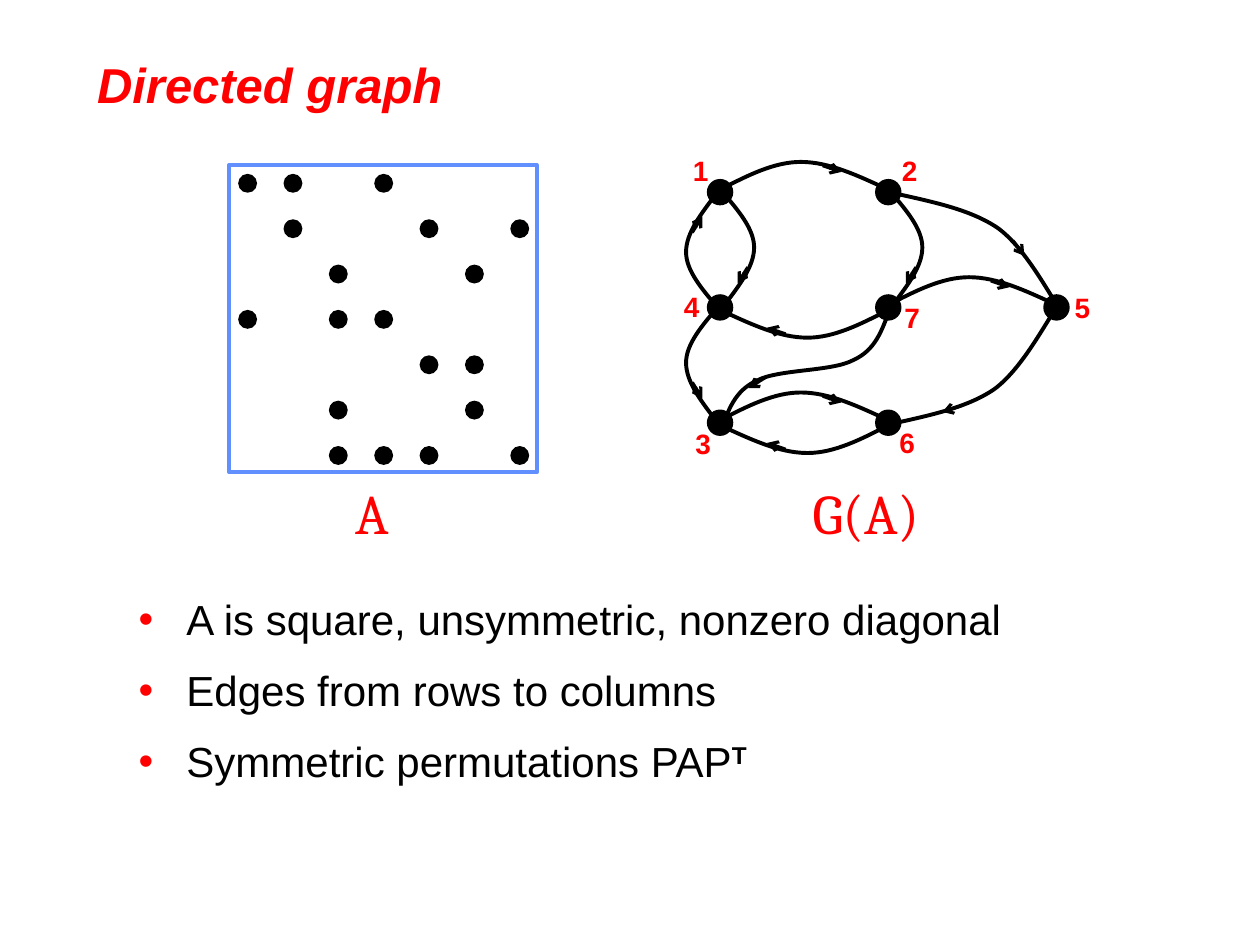
from pptx import Presentation
from pptx.dml.color import RGBColor as RGB
from pptx.enum.shapes import MSO_CONNECTOR as Conn, MSO_SHAPE as Form
from pptx.enum.text import MSO_ANCHOR as Anchor, MSO_AUTO_SIZE as Auto, PP_ALIGN as Align
from pptx.oxml.ns import qn
from pptx.util import Inches, Pt
from lxml.etree import SubElement as Sub

THEME = {
    "red": RGB(255, 0, 0), "black": RGB(0, 0, 0), "blue": RGB(0x61, 0x8F, 0xFD),
    "sans": "Arial", "serif": "Cambria",
    "title": 28, "body": 24, "name": 32, "node": 16,
    "curve": 2.25, "arrow": 1.75,
}
TITLE = "Directed graph"
BODY = [
    [("A is square, unsymmetric, nonzero diagonal", False)],
    [("Edges from rows to columns", False)],
    [("Symmetric permutations PAP", False), ("T", True)],
]
NAMES = [("A", 2.72, 0.52), ("G(A)", 6.35, 1.25)]

# node: (grid column, grid row, label left, label top)
NODES = {
    1: (0, 0, 5.4, 1.17), 2: (1, 0, 7.06, 1.17), 3: (0, 2, 5.42, 3.34),
    4: (0, 1, 5.33, 2.25), 5: (2, 1, 8.43, 2.26), 6: (1, 2, 7.04, 3.33),
    7: (1, 1, 7.08, 2.34),
}
# (row, column): curve style
EDGES = {
    (1, 2): "left", (1, 4): "left", (2, 5): "fall", (2, 7): "left",
    (3, 6): "left", (4, 1): "left", (4, 3): "right", (5, 6): "back",
    (6, 3): "left", (7, 3): "wave", (7, 4): "left", (7, 5): "left",
}
ARCH = [(0, 0), (0.16, 0.5), (0.32, 1), (0.48, 1), (0.65, 1), (0.82, 0.5), (1, 0)]
LONG = [(0, 0), (0.31, 0.07), (0.62, 0.13), (0.84, 0.28),
        (1.06, 0.44), (1.25, 0.81), (1.33, 0.92)]
HALF = [(0.67, -0.48), (0.61, -0.32), (0.56, -0.16), (0.38, -0.08), (0.21, 0.01)]


def spot(node):
    col, row, _, _ = NODES[node]
    return 5.715 + 1.335 * col, 1.525 + 0.915 * row


def arch(start, end, side):
    (x, y), (u, v) = spot(start), spot(end)
    flat = y == v
    size = abs(u - x) + abs(v - y)
    out = side * (v - y) / size, side * (x - u) / size

    def at(t, s):
        s += 0.02
        return x + t * (u - x) + s * out[0], y + t * (v - y) + s * out[1]

    high = 0.22 if flat else 0.25
    tips = [(0.61, 0.19), (0.72, 0.14)] if flat else [(0.65, 0.2), (0.79, 0.12)]
    return [at(t, high * s) for t, s in ARCH], [at(t, s) for t, s in tips]


def route(start, end, style):
    if style in ("left", "right"):
        return arch(start, end, 1 if style == "left" else -1)
    if style == "wave":
        both = HALF + [(-x, -y) for x, y in reversed(HALF)]
        return [(6.39 + x, 2.94 + y) for x, y in both], [(6.07, 3), (5.94, 3.08)]
    if style == "fall":
        return [(7.08 + x, 1.53 + y) for x, y in LONG], [(8.04, 1.91), (8.13, 2.03)]
    return ([(7.05 + x, 3.37 - y) for x, y in reversed(LONG)],
            [(7.63, 3.22), (7.48, 3.27)])


def place(shape, *box):
    shape.left, shape.top, shape.width, shape.height = map(Inches, box)


def write(para, text, size, color, face="sans", bold=False):
    run = para.add_run()
    run.text = text
    font = run.font
    font.name, font.size, font.bold = THEME[face], Pt(THEME[size]), bold
    font.color.rgb = THEME[color]
    return run


def label(shapes, text, box, size, **style):
    frame = shapes.add_textbox(*map(Inches, box)).text_frame
    frame.word_wrap = False
    frame.auto_size = Auto.SHAPE_TO_FIT_TEXT
    write(frame.paragraphs[0], text, size, "red", **style)


def dot(shapes, left, top, size):
    shape = shapes.add_shape(Form.OVAL, *map(Inches, (left, top, size, size)))
    shape.shadow.inherit = False
    shape.fill.solid()
    shape.fill.fore_color.rgb = THEME["black"]
    shape.line.fill.background()


def stroke(shape, color, size):
    shape.line.color.rgb = THEME[color]
    shape.line.width = Pt(THEME[size])


def curve(shapes, points):
    start, *rest = [(Inches(x), Inches(y)) for x, y in points]
    pen = shapes.build_freeform(*start)
    pen.add_line_segments(rest, close=False)
    shape = pen.convert_to_shape()
    shape.shadow.inherit = False
    shape.fill.background()
    stroke(shape, "black", "curve")
    trace = next(shape.element.iter(qn("a:path")))
    steps = trace.findall(qn("a:lnTo"))
    for i in range(0, len(steps), 3):
        bend = Sub(trace, qn("a:cubicBezTo"))
        for step in steps[i:i + 3]:
            bend.append(step[0])
            trace.remove(step)


def arrow(shapes, ends):
    (x, y), (u, v) = ends
    line = shapes.add_connector(Conn.STRAIGHT, *map(Inches, (x, y, u, v)))
    stroke(line, "black", "arrow")
    Sub(line.line._get_or_add_ln(), qn("a:tailEnd"), type="arrow")
    Sub(line.element.spPr, qn("a:effectLst"))


def bullet(para):
    para.line_spacing = 1.2
    para.space_before = Pt(6)
    prop = para._p.get_or_add_pPr()
    prop.set("marL", str(Inches(0.38)))
    prop.set("indent", str(-Inches(0.38)))
    tint = Sub(prop, qn("a:buClr"))
    Sub(tint, qn("a:srgbClr"), val=str(THEME["red"]))
    Sub(prop, qn("a:buFont"), typeface=THEME["sans"])
    Sub(prop, qn("a:buChar"), char="•")


def heads(slide):
    title, body = slide.shapes.title, slide.placeholders[1]
    place(title, 0.67, 0.33, 8.19, 0.67)
    place(body, 1, 4.58, 8, 2.08)
    for shape, anchor in ((title, Anchor.MIDDLE), (body, Anchor.TOP)):
        shape.text_frame.auto_size = Auto.NONE
        shape.text_frame.vertical_anchor = anchor
    para = title.text_frame.paragraphs[0]
    para.alignment = Align.LEFT
    write(para, TITLE, "title", "red", bold=True).font.italic = True
    frame = body.text_frame
    for i, parts in enumerate(BODY):
        para = frame.add_paragraph() if i else frame.paragraphs[0]
        bullet(para)
        for text, power in parts:
            run = write(para, text, "body", "black", bold=power)
            if power:
                run.font._element.set("baseline", "30000")


def matrix(shapes):
    box = shapes.add_shape(Form.RECTANGLE, *map(Inches, (1.82, 1.31, 2.44, 2.44)))
    box.shadow.inherit = False
    box.fill.background()
    stroke(box, "blue", "curve")
    for row, col in [*EDGES, *((n, n) for n in NODES)]:
        dot(shapes, 1.89 + 0.36 * (col - 1), 1.38 + 0.36 * (row - 1), 0.15)


def graph(shapes):
    for node in NODES:
        x, y = spot(node)
        dot(shapes, x - 0.105, y - 0.105, 0.21)
    for (start, end), style in EDGES.items():
        points, ends = route(start, end, style)
        arrow(shapes, ends)
        curve(shapes, points)
    for node, (_, _, left, top) in NODES.items():
        label(shapes, str(node), (left, top, 0.32, 0.37), "node", bold=True)


def main():
    deck = Presentation()
    deck.slide_width, deck.slide_height = Inches(10), Inches(7.5)
    slide = deck.slides.add_slide(deck.slide_layouts[1])
    heads(slide)
    for draw in (matrix, graph):
        draw(slide.shapes.add_group_shape().shapes)
    for text, left, width in NAMES:
        label(slide.shapes, text, (left, 3.75, width, 0.63), "name", face="serif")
    deck.save("out.pptx")


if __name__ == "__main__":
    main()
